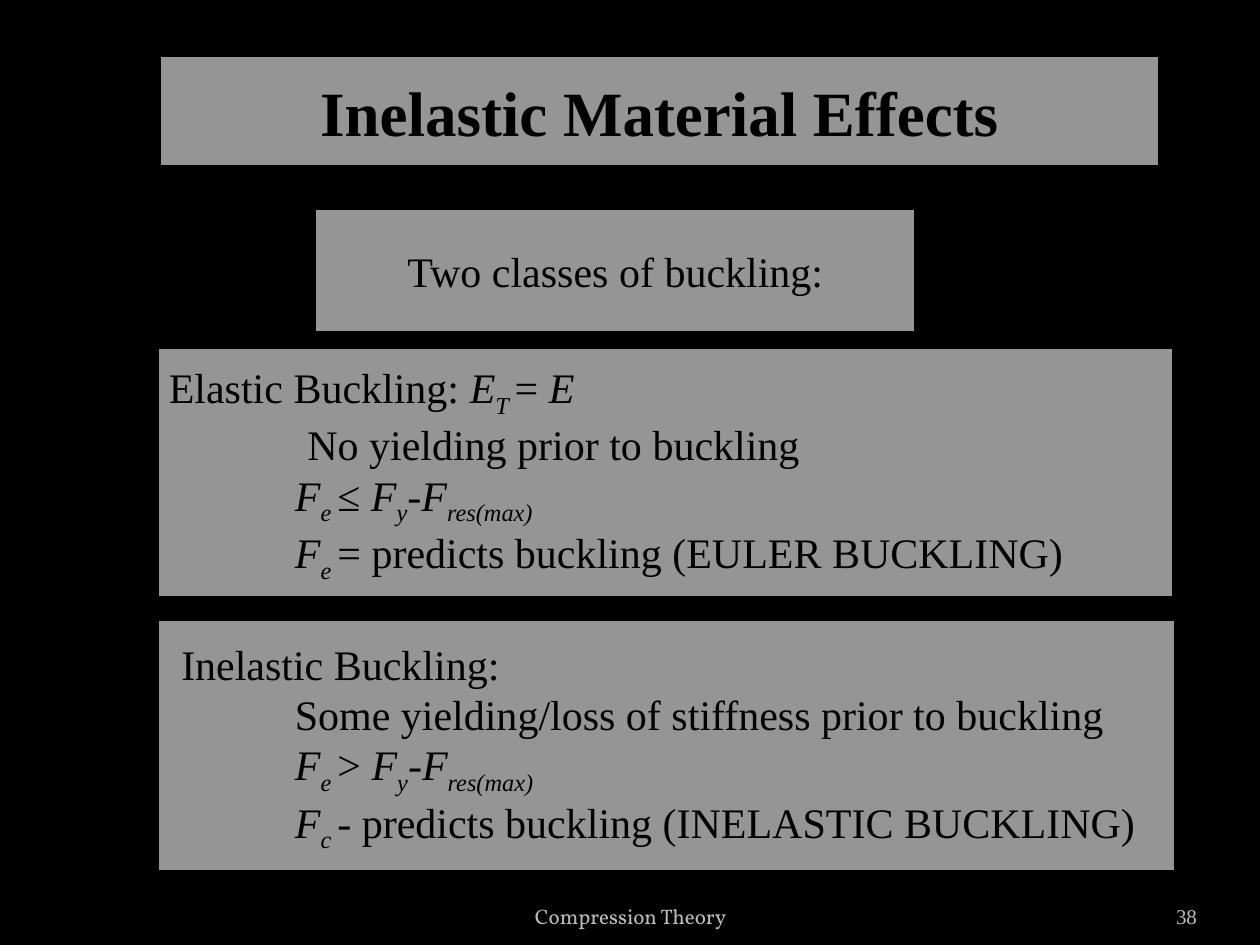
from dataclasses import dataclass

from lxml.etree import SubElement
from pptx import Presentation
from pptx.dml.color import RGBColor
from pptx.enum.shapes import MSO_SHAPE
from pptx.enum.text import MSO_ANCHOR, MSO_AUTO_SIZE, PP_ALIGN
from pptx.oxml.ns import qn
from pptx.util import Cm, Pt


@dataclass(frozen=True)
class Theme:
    back: str = "000000"
    panel: str = "F2F2F2"
    ink: str = "000000"
    pale: str = "BCBCBC"
    alpha: int = 62
    edge: float = 3
    head: int = 36
    body: int = 24
    note: int = 12
    font: str = "Times New Roman"
    foot: str = "Vollkorn"


THEME = Theme()
TAB = 2.54
NUDGE = 0.25
PLAIN, VAR, SUB = "plain", "variable", "subscript"


def color(code):
    return RGBColor.from_string(code)


def place(shape, box):
    shape.left, shape.top, shape.width, shape.height = map(Cm, box)


def panel(shape, box):
    """Style a shape as a translucent panel with middle-anchored text."""
    place(shape, box)
    shape.fill.solid()
    shape.fill.fore_color.rgb = color(THEME.panel)
    tint = shape.fill._xPr.find(".//" + qn("a:srgbClr"))
    SubElement(tint, qn("a:alpha"), val=str(THEME.alpha * 1000))
    shape.line.color.rgb = color(THEME.ink)
    shape.line.width = Pt(THEME.edge)
    frame = shape.text_frame
    frame.word_wrap = True
    frame.auto_size = MSO_AUTO_SIZE.NONE
    frame.vertical_anchor = MSO_ANCHOR.MIDDLE
    return frame


def write(para, text, size, font=THEME.font, ink=THEME.ink, kind=PLAIN, bold=False):
    run = para.add_run()
    run.text = text
    face = run.font
    face.name, face.size, face.bold = font, Pt(size), bold
    face.italic = kind != PLAIN
    face.color.rgb = color(ink)
    if kind == SUB:
        face._element.set("baseline", "-25000")


def title(slide, box, text):
    para = panel(slide.shapes.title, box).paragraphs[0]
    para.alignment = PP_ALIGN.CENTER
    write(para, text, THEME.head, bold=True)


def intro(slide, box, text):
    shape = slide.shapes.add_shape(MSO_SHAPE.RECTANGLE, *map(Cm, box))
    shape.shadow.inherit = False
    para = panel(shape, box).paragraphs[0]
    para.alignment = PP_ALIGN.CENTER
    write(para, text, THEME.body)


def case(holder, box, lines):
    """Fill a body placeholder with (indent, runs) lines."""
    frame = panel(holder, box)
    for num, (indent, runs) in enumerate(lines):
        para = frame.add_paragraph() if num else frame.paragraphs[0]
        props = para._p.get_or_add_pPr()
        props.set("marL", str(Cm(indent)))
        props.set("indent", "0")
        SubElement(props, qn("a:buNone"))
        para.alignment = PP_ALIGN.LEFT
        para.space_before = Pt(0)
        for text, kind in runs:
            write(para, text, THEME.body, kind=kind)


def limit(sign):
    """Runs that compare the elastic stress with the yield limit."""
    return [("F", VAR), ("e ", SUB), (sign + " ", PLAIN), ("F", VAR), ("y", SUB),
            ("-", PLAIN), ("F", VAR), ("res(max)", SUB)]


def footer(slide, box, text, font, align, side):
    shape = slide.shapes.add_textbox(*map(Cm, box))
    frame = shape.text_frame
    frame.word_wrap = True
    frame.vertical_anchor = MSO_ANCHOR.BOTTOM
    frame.margin_left = frame.margin_right = Cm(side)
    para = frame.paragraphs[0]
    para.alignment = align
    write(para, text, THEME.note, font, THEME.pale)


def main():
    deck = Presentation()
    deck.slide_width, deck.slide_height = Cm(25.4), Cm(19.05)
    slide = deck.slides.add_slide(deck.slide_layouts.get_by_name("Two Content"))
    slide.background.fill.solid()
    slide.background.fill.fore_color.rgb = color(THEME.back)
    first, second = list(slide.placeholders)[1:]

    title(slide, (3.2, 1.09, 20.19, 2.29), "Inelastic Material Effects")
    intro(slide, (6.32, 4.19, 12.17, 2.54), "Two classes of buckling:")
    case(first, (3.15, 6.99, 20.52, 5.08), [
        (0, [("Elastic Buckling: ", PLAIN), ("E", VAR), ("T ", SUB),
             ("= ", PLAIN), ("E", VAR)]),
        (TAB + NUDGE, [("No yielding prior to buckling", PLAIN)]),
        (TAB, limit("≤")),
        (TAB, [("F", VAR), ("e ", SUB),
               ("= predicts buckling (EULER BUCKLING)", PLAIN)]),
    ])
    case(second, (3.15, 12.47, 20.57, 5.13), [
        (NUDGE, [("Inelastic Buckling:", PLAIN)]),
        (TAB, [("Some yielding/loss of stiffness prior to buckling", PLAIN)]),
        (TAB, limit(">")),
        (TAB, [("F", VAR), ("c ", SUB),
               ("- predicts buckling (INELASTIC BUCKLING)", PLAIN)]),
    ])
    footer(slide, (8.69, 17.83, 8.05, 1.02), "Compression Theory",
           THEME.foot, PP_ALIGN.CENTER, 0.25)
    footer(slide, (22.02, 17.83, 2.11, 1.02), "38", THEME.font, PP_ALIGN.RIGHT, 0)
    deck.save("out.pptx")


if __name__ == "__main__":
    main()
